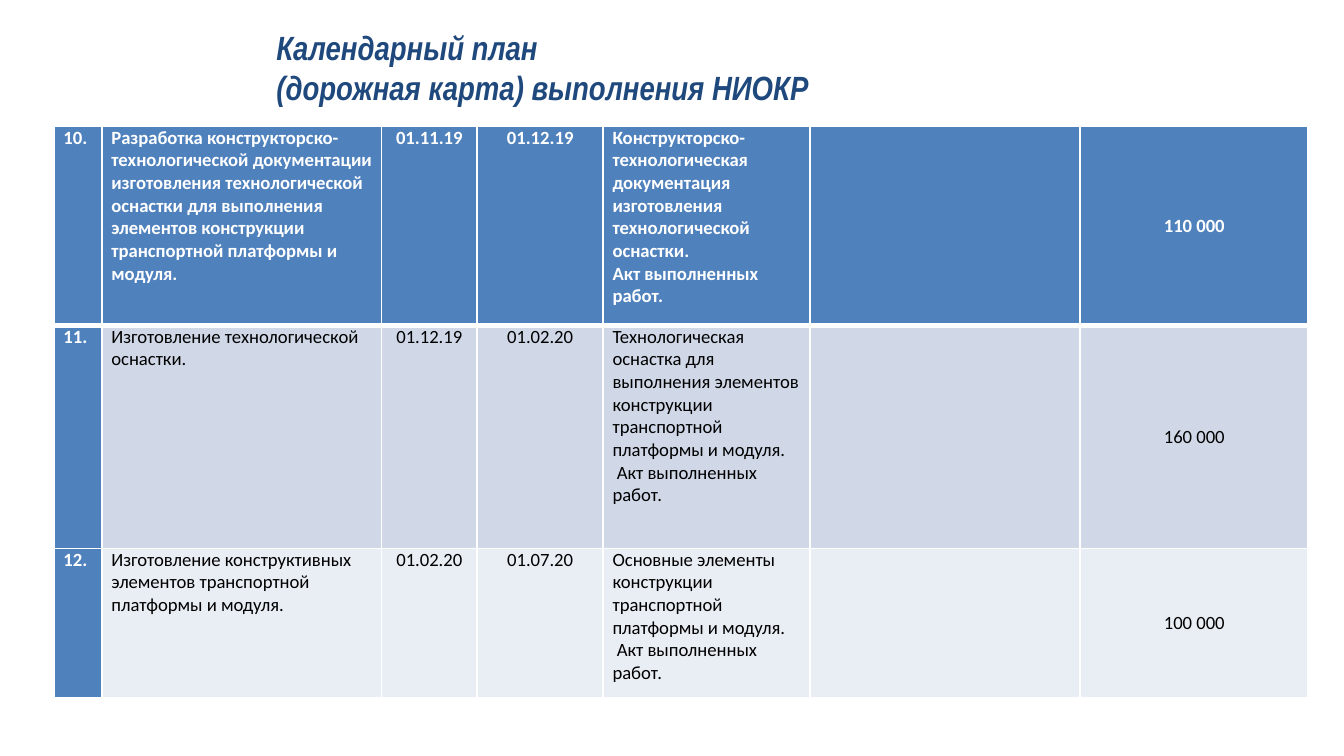
from lxml.etree import SubElement
from pptx import Presentation
from pptx.dml.color import RGBColor
from pptx.enum.text import MSO_ANCHOR, PP_ALIGN
from pptx.oxml.ns import qn
from pptx.util import Pt

COLORS = {
    "title": "1F497D",
    "head": "4F81BD",
    "odd": "D0D8E8",
    "even": "E9EDF4",
    "white": "FFFFFF",
    "black": "000000",
}
COL_WIDTHS = [25.7, 149.8, 51.1, 67.7, 110.9, 144.7, 122.2]
ROW_HEIGHTS = [106.6, 119.5, 79.9]
CENTERED = {2, 3, 6}
COST_COL = 6
STAGES = [
    ["10.", "Разработка конструкторско-технологической документации изготовления "
     "технологической оснастки для выполнения элементов конструкции транспортной "
     "платформы и модуля.", "01.11.19", "01.12.19",
     "Конструкторско-технологическая документация изготовления технологической "
     "оснастки.\nАкт выполненных работ.", "", "110 000"],
    ["11.", "Изготовление технологической оснастки.", "01.12.19", "01.02.20",
     "Технологическая оснастка для выполнения элементов конструкции транспортной "
     "платформы и модуля.\n Акт выполненных работ.", "", "160 000"],
    ["12.", "Изготовление конструктивных элементов транспортной платформы и модуля.",
     "01.02.20", "01.07.20",
     "Основные элементы конструкции транспортной платформы и модуля.\n"
     " Акт выполненных работ.", "", "100 000"],
]


def rgb(name):
    """Return the named colour."""
    return RGBColor.from_string(COLORS[name])


def set_borders(cell, widths):
    """Draw white borders on a cell, with widths in points by side."""
    tcPr = cell._tc.get_or_add_tcPr()
    for side, width in widths.items():
        ln = SubElement(tcPr, qn(f"a:ln{side}"), w=str(Pt(width)))
        fill = SubElement(ln, qn("a:solidFill"))
        SubElement(fill, qn("a:srgbClr"), val=COLORS["white"])


def style_cell(cell, row, col):
    """Format a cell by its place in the plan."""
    strong = row == 0 or col == 0
    set_borders(cell, {"L": 1, "R": 1, "T": 3 if row == 1 else 1,
                       "B": 3 if row == 0 else 1})
    cell.fill.solid()
    cell.fill.fore_color.rgb = rgb("head" if strong else "odd" if row % 2 else "even")
    cell.margin_left = cell.margin_right = Pt(5)
    cell.margin_top = cell.margin_bottom = Pt(0)
    cell.vertical_anchor = MSO_ANCHOR.MIDDLE if col == COST_COL else MSO_ANCHOR.TOP
    for p in cell.text_frame.paragraphs:
        p.alignment = PP_ALIGN.CENTER if col in CENTERED else PP_ALIGN.LEFT
        p.font.name = "Calibri"
        p.font.size = Pt(10)
        p.font.bold = strong
        p.font.color.rgb = rgb("white" if strong else "black")


def add_title(s, x, y, w, h):
    """Add the two-line slide title."""
    tf = s.shapes.add_textbox(Pt(x), Pt(y), Pt(w), Pt(h)).text_frame
    tf.word_wrap = True
    p = tf.paragraphs[0]
    p.text = "Календарный план \v(дорожная карта) выполнения НИОКР"
    p.font.name = "Arial Narrow"
    p.font.size = Pt(18)
    p.font.bold = p.font.italic = True
    p.font.color.rgb = rgb("title")


def add_plan(s, x, y, w, h):
    """Add the table of project stages."""
    table = s.shapes.add_table(len(STAGES), len(COL_WIDTHS),
                               Pt(x), Pt(y), Pt(w), Pt(h)).table
    table.first_col = True
    for column, width in zip(table.columns, COL_WIDTHS):
        column.width = Pt(width * w / sum(COL_WIDTHS))
    for row, height in zip(table.rows, ROW_HEIGHTS):
        row.height = Pt(height * h / sum(ROW_HEIGHTS))
    for i, stage in enumerate(STAGES):
        for j, text in enumerate(stage):
            cell = table.cell(i, j)
            cell.text = text
            style_cell(cell, i, j)


def main():
    """Build and save the slide."""
    prs = Presentation()
    prs.slide_width, prs.slide_height = Pt(720), Pt(405)
    s = prs.slides.add_slide(prs.slide_layouts[6])
    add_plan(s, 29, 67.8, 672, 306)
    add_title(s, 141, 10.8, 360, 51)
    prs.save("out.pptx")


if __name__ == "__main__":
    main()
